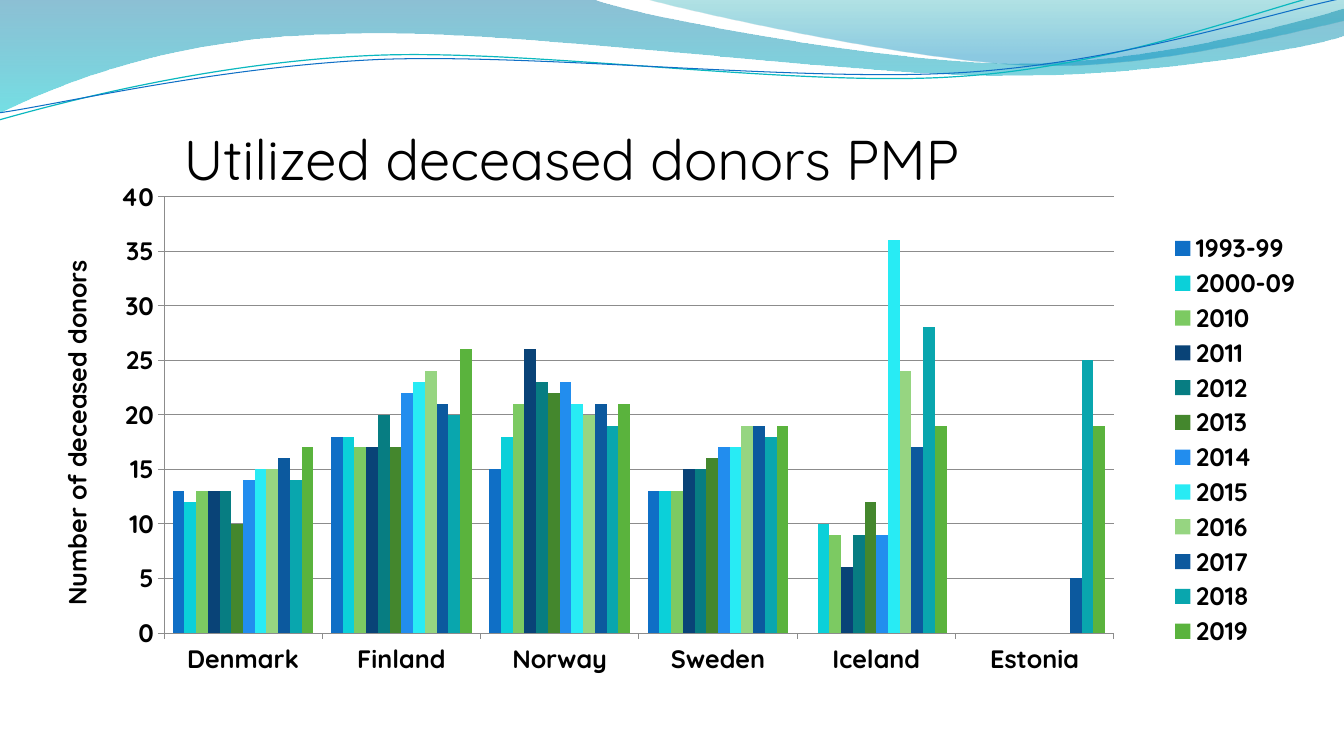
from lxml.etree import SubElement
from pptx import Presentation
from pptx.chart.data import CategoryChartData
from pptx.dml.color import RGBColor
from pptx.enum.chart import XL_CHART_TYPE, XL_LEGEND_POSITION, XL_TICK_MARK
from pptx.enum.text import MSO_ANCHOR, MSO_AUTO_SIZE, PP_ALIGN
from pptx.oxml import parse_xml
from pptx.oxml.ns import nsdecls, qn
from pptx.util import Inches, Pt

COLUMNS, ROWS = 13.33, 7.5
CELL = Inches(1)  # side of one grid square
FONT = "Quicksand"

BLACK = RGBColor(0x00, 0x00, 0x00)
GRID_GRAY = RGBColor(0x8C, 0x8C, 0x8C)
DEEP_BLUE = RGBColor(0x00, 0x74, 0xA1)
AQUA = RGBColor(0x00, 0xC6, 0xCF)
TEAL = RGBColor(0x00, 0xA1, 0xA9)
SKY_BLUE = RGBColor(0x00, 0x8B, 0xBF)
LINE_TEAL = RGBColor(0x0A, 0xB8, 0xBF)
LINE_BLUE = RGBColor(0x0F, 0x6F, 0xC6)

# Each wave is a start point, then straight (one point) or cubic (three points) steps.
LEFT_WAVE = [
    (0, 0), [(5.87, -0.01)],
    [(6.34, 0.17), (8.84, 0.63), (10.11, 0.63)],
    [(11.37, 0.63), (12.77, 0.26), (13.33, 0.09)],
    [(13.34, 0.36)],
    [(13.11, 0.44), (11.59, 0.76), (9.94, 0.75)],
    [(8.29, 0.75), (5.09, 0.28), (3.43, 0.34)],
    [(1.72, 0.36), (0.61, 0.83), (-0.02, 1.13)],
]
RIGHT_WAVE = [
    (6.38, -0.01),
    [(6.79, 0.11), (9.09, 0.62), (10.25, 0.65)],
    [(11.4, 0.69), (12.82, 0.32), (13.33, 0.21)],
    [(13.33, 0)],
]
TEAL_LINE = [
    (-0.01, 1.19),
    [(0.63, 1.01), (2.1, 0.62), (3.69, 0.55)],
    [(5.27, 0.48), (7.89, 0.87), (9.49, 0.76)],
    [(11.1, 0.66), (12.51, 0.08), (13.3, -0.1)],
]
BLUE_LINE = [
    (-0.01, 1.12),
    [(0.62, 1.03), (2.18, 0.66), (3.77, 0.59)],
    [(5.37, 0.53), (7.96, 0.82), (9.55, 0.72)],
    [(11.14, 0.62), (12.55, 0.14), (13.33, -0.02)],
]

COUNTRIES = ["Denmark", "Finland", "Norway", "Sweden", "Iceland", "Estonia"]
DONORS = [
    ("1993-99", "0F6FC6", [13, 18, 15, 13, None, None]),
    ("2000-09", "0BD0D9", [12, 18, 18, 13, 10, None]),
    ("2010", "7CCA62", [13, 17, 21, 13, 9, None]),
    ("2011", "094377", [13, 17, 26, 15, 6, None]),
    ("2012", "077D82", [13, 20, 23, 15, 9, None]),
    ("2013", "44872D", [10, 17, 22, 16, 12, None]),
    ("2014", "228DEE", [14, 22, 23, 17, 9, None]),
    ("2015", "28EBF4", [15, 23, 21, 17, 36, None]),
    ("2016", "96D581", [15, 24, 20, 19, 24, None]),
    ("2017", "0C599E", [16, 21, 21, 19, 17, 5]),
    ("2018", "09A6AE", [14, 20, 19, 18, 28, 25]),
    ("2019", "5AB33D", [17, 26, 21, 19, 19, 19]),
]


def cells(*lengths):
    return [round(length * CELL) for length in lengths]


def format_font(font, size=18, bold=True, color=BLACK):
    font.name, font.size, font.bold = FONT, Pt(size), bold
    font.color.rgb = color


def write_text(frame, text, align=None, line_spacing=None, **font_format):
    frame.text = text
    paragraph = frame.paragraphs[0]
    paragraph.alignment, paragraph.line_spacing = align, line_spacing
    format_font(paragraph.runs[0].font, **font_format)


def add_outline(slide, outline, close):
    """Draw through all points, then turn each three-point step into one cubic curve."""
    start, *steps = outline
    builder = slide.shapes.build_freeform(*cells(*start))
    builder.add_line_segments([cells(*point) for step in steps for point in step],
                              close=close)
    shape = builder.convert_to_shape()
    shape.shadow.inherit = False
    segments = iter(list(shape._element.iter(qn("a:lnTo"))))
    for step in steps:
        first, *others = [next(segments) for _ in step]
        if others:
            first.tag = qn("a:cubicBezTo")
        for segment in others:
            first.append(segment[0])
            segment.getparent().remove(segment)
    return shape


def add_wave(slide, outline, stops):
    """Add a filled wave; stops hold position, colour and opacity in percent."""
    wave = add_outline(slide, outline, close=True)
    wave.line.fill.background()
    wave.fill.gradient()
    wave.fill.gradient_angle = 270
    for stop, (position, color, _) in zip(wave.fill.gradient_stops, stops):
        stop.position, stop.color.rgb = position, color
    colors = wave._element.spPr.iter(qn("a:srgbClr"))
    for color, (_, _, opacity) in zip(list(colors), stops):
        SubElement(color, qn("a:alpha"), val=str(opacity * 1000))


def add_curve(slide, outline, color, width):
    curve = add_outline(slide, outline, close=False)
    curve.fill.background()
    curve.line.color.rgb, curve.line.width = color, Pt(width)


def add_title(slide, text):
    title = slide.shapes.title
    title.left, title.top, title.width, title.height = cells(1.82, 1.16, 9.19, 0.74)
    frame = title.text_frame
    frame.auto_size, frame.word_wrap = MSO_AUTO_SIZE.NONE, True
    frame.vertical_anchor = MSO_ANCHOR.BOTTOM
    frame.margin_left = frame.margin_right = frame.margin_bottom = 0
    frame.margin_top = Inches(0.05)
    write_text(frame, text, align=PP_ALIGN.LEFT, line_spacing=0.8, size=40, bold=False)


def place(element, inner=False, **shares):
    """Fix a chart part at shares (x, y, w, h) of the chart's size."""
    for layout in element.findall(qn("c:layout")):
        element.remove(layout)
    target = '<c:layoutTarget val="inner"/>' if inner else ""
    modes = "".join(f'<c:{key}Mode val="edge"/>' for key in "xy")
    sizes = "".join(f'<c:{key} val="{share}"/>' for key, share in shares.items())
    layout = parse_xml(f'<c:layout {nsdecls("c")}><c:manualLayout>{target}{modes}'
                       f'{sizes}</c:manualLayout></c:layout>')
    leading = [child for child in element if child.tag in (qn("c:tx"), qn("c:legendPos"))]
    element.insert(len(leading), layout)


def format_line(line):
    line.color.rgb, line.width = GRID_GRAY, Pt(0.5)


def format_axis(axis):
    axis.major_tick_mark, axis.minor_tick_mark = XL_TICK_MARK.OUTSIDE, XL_TICK_MARK.NONE
    format_line(axis.format.line)
    format_font(axis.tick_labels.font)


def add_donor_chart(slide):
    data = CategoryChartData()
    data.categories = COUNTRIES
    for period, _, rates in DONORS:
        data.add_series(period, rates)
    chart = slide.shapes.add_chart(XL_CHART_TYPE.COLUMN_CLUSTERED,
                                   *cells(0.41, 1.76, 12.53, 5.16), data).chart
    chart.has_title = False
    format_font(chart.font)
    plot = chart.plots[0]
    plot.gap_width, plot.overlap, plot.vary_by_categories = 150, 0, False
    for series, (_, color, _) in zip(plot.series, DONORS):
        series.format.fill.solid()
        series.format.fill.fore_color.rgb = RGBColor.from_string(color)
        series.invert_if_negative = False

    rate_axis = chart.value_axis
    for axis in (chart.category_axis, rate_axis):
        format_axis(axis)
    rate_axis.minimum_scale, rate_axis.maximum_scale, rate_axis.major_unit = 0, 40, 5
    rate_axis.tick_labels.number_format = "0"
    rate_axis.tick_labels.number_format_is_linked = False
    format_line(rate_axis.major_gridlines.format.line)
    write_text(rate_axis.axis_title.text_frame, "Number of deceased donors")
    place(rate_axis.axis_title._element, x=0.01, y=0.15)

    chart.has_legend = True
    chart.legend.position = XL_LEGEND_POSITION.RIGHT
    chart.legend.include_in_layout = False
    format_font(chart.legend.font)
    place(chart.legend._element, x=0.89, y=0.1, w=0.11, h=0.81)
    place(chart._chartSpace.chart.plotArea, inner=True, x=0.097, y=0.037, w=0.752, h=0.839)


def main():
    deck = Presentation()
    deck.slide_width, deck.slide_height = cells(COLUMNS, ROWS)
    slide = deck.slides.add_slide(deck.slide_layouts[5])
    add_wave(slide, LEFT_WAVE, [(0, DEEP_BLUE, 45), (1, AQUA, 55)])
    add_wave(slide, RIGHT_WAVE, [(0, TEAL, 30), (0.8, SKY_BLUE, 45)])
    add_curve(slide, TEAL_LINE, LINE_TEAL, 0.85)
    add_curve(slide, BLUE_LINE, LINE_BLUE, 0.75)
    add_title(slide, "Utilized deceased donors PMP")
    add_donor_chart(slide)
    deck.save("out.pptx")


if __name__ == "__main__":
    main()
